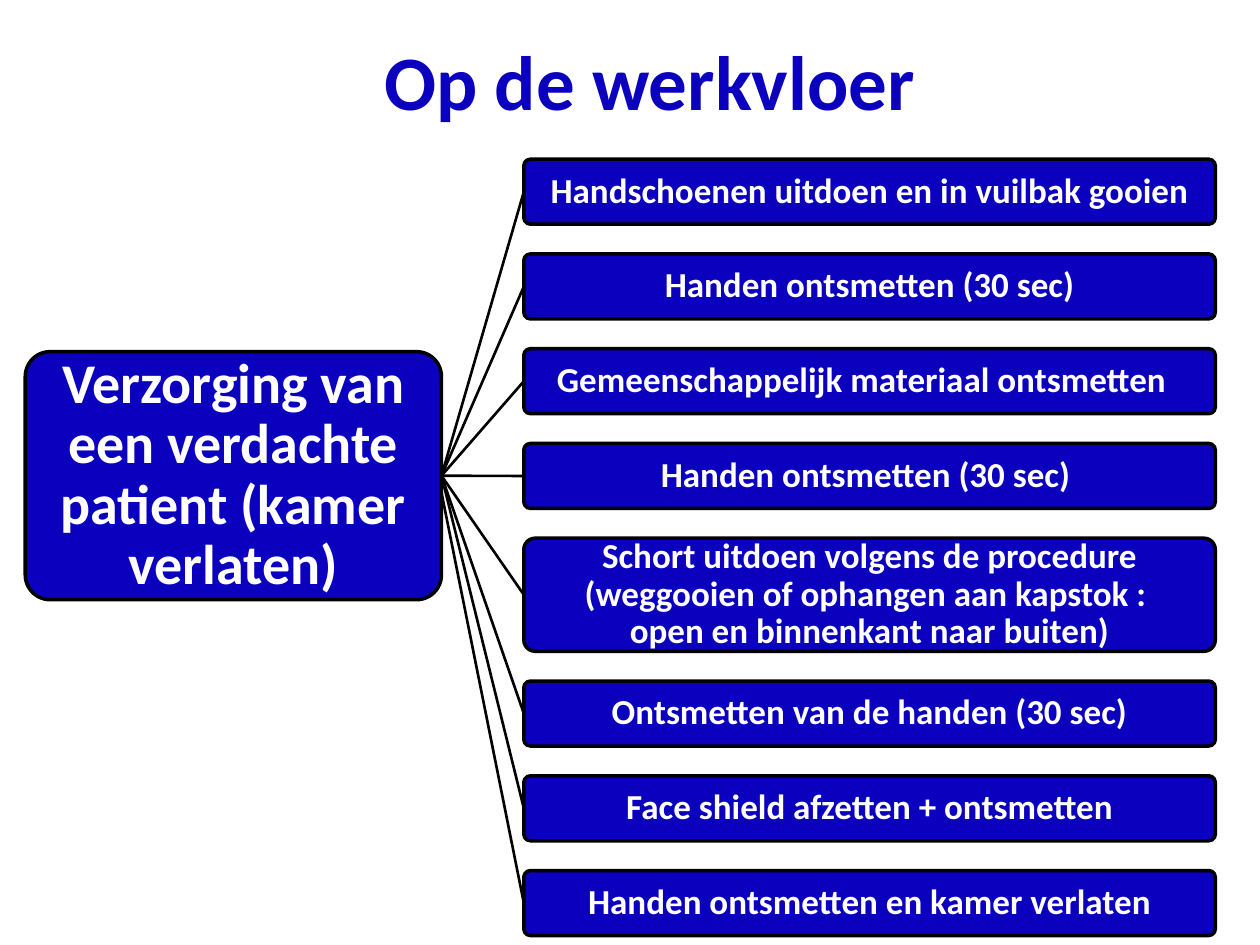
from dataclasses import dataclass

from lxml import etree
from pptx import Presentation
from pptx.dml.color import RGBColor
from pptx.enum.shapes import MSO_CONNECTOR, MSO_SHAPE
from pptx.enum.text import MSO_ANCHOR, PP_ALIGN
from pptx.oxml.ns import qn
from pptx.util import Cm, Pt

ROUNDED = MSO_SHAPE.ROUNDED_RECTANGLE
STRAIGHT = MSO_CONNECTOR.STRAIGHT
MIDDLE = MSO_ANCHOR.MIDDLE
CENTER = PP_ALIGN.CENTER


@dataclass(frozen=True)
class Theme:
    font: str = "Calibri"
    blue: RGBColor = RGBColor(0x0A, 0x00, 0xBE)
    white: RGBColor = RGBColor(0xFF, 0xFF, 0xFF)
    black: RGBColor = RGBColor(0x00, 0x00, 0x00)
    title_size: int = 44
    topic_size: int = 32
    step_size: int = 20
    border: float = 2
    branch: float = 1.5


@dataclass(frozen=True)
class Box:
    """Position and size in centimetres."""
    left: float
    top: float
    width: float
    height: float

    @property
    def right(self) -> float:
        return self.left + self.width

    @property
    def middle(self) -> float:
        return self.top + self.height / 2

    def lengths(self) -> list:
        return [Cm(value) for value in (self.left, self.top, self.width, self.height)]


@dataclass(frozen=True)
class Step:
    text: str
    height: float = 1.31
    extra_right: float = 0
    start_shift: float = 0


THEME = Theme()
TITLE_BOX = Box(4.5, 0.03, 17.2, 3.17)
TOPIC_BOX = Box(0.51, 7.09, 8.39, 5)
STEP_LEFT, STEP_TOP, STEP_WIDTH, STEP_GAP = 10.56, 3.21, 13.94, 0.6

STEPS = [
    Step("Handschoenen uitdoen en in vuilbak gooien"),
    Step("Handen ontsmetten (30 sec)"),
    Step("Gemeenschappelijk materiaal ontsmetten", extra_right=0.32),
    Step("Handen ontsmetten (30 sec)", extra_right=0.16),
    Step("Schort uitdoen volgens de procedure (weggooien of ophangen aan kapstok : "
         "\vopen en binnenkant naar buiten)", height=2.28),
    Step("Ontsmetten van de handen (30 sec)"),
    Step("Face shield afzetten + ontsmetten"),
    Step("Handen ontsmetten en kamer verlaten", start_shift=0.34),
]


def apply_format(target, values: dict) -> None:
    for name, value in values.items():
        setattr(target, name, value)


def write_text(shape, text: str, size: int, color: RGBColor,
               inset: float, extra_right: float = 0, spacing: float = 1) -> None:
    frame = shape.text_frame
    apply_format(frame, {
        "text": text, "word_wrap": True, "vertical_anchor": MIDDLE,
        "margin_left": Cm(inset), "margin_right": Cm(inset + extra_right),
        "margin_top": Cm(inset), "margin_bottom": Cm(inset),
    })
    paragraph = frame.paragraphs[0]
    apply_format(paragraph, {"alignment": CENTER, "line_spacing": spacing})
    for run in paragraph.runs:
        apply_format(run.font, {"name": THEME.font, "size": Pt(size), "bold": True})
        run.font.color.rgb = color


def draw_box(slide, box: Box, text: str, size: int,
             inset: float, extra_right: float = 0) -> None:
    shape = slide.shapes.add_shape(ROUNDED, *box.lengths())
    shape.adjustments[0] = 0.1
    shape.shadow.inherit = False
    shape.fill.solid()
    shape.fill.fore_color.rgb = THEME.blue
    shape.line.color.rgb = THEME.black
    shape.line.width = Pt(THEME.border)
    write_text(shape, text, size, THEME.white, inset, extra_right, 0.9)


def draw_branch(slide, target: Box, start_shift: float) -> None:
    connector = slide.shapes.add_connector(
        STRAIGHT, Cm(TOPIC_BOX.right), Cm(TOPIC_BOX.middle + start_shift),
        Cm(target.left), Cm(target.middle))
    connector.line.color.rgb = THEME.black
    connector.line.width = Pt(THEME.branch)
    properties = connector._element.find(qn("p:spPr"))
    etree.SubElement(properties, qn("a:effectLst"))


def main() -> None:
    presentation = Presentation()
    presentation.slide_width, presentation.slide_height = Cm(25.4), Cm(19.05)
    slide = presentation.slides.add_slide(presentation.slide_layouts[6])

    # Topic on the left
    draw_box(slide, TOPIC_BOX, "Verzorging van een verdachte patient (kamer verlaten)",
             THEME.topic_size, 0.23)

    # Steps stacked with equal gaps
    step_boxes = []
    top = STEP_TOP
    for step in STEPS:
        box = Box(STEP_LEFT, top, STEP_WIDTH, step.height)
        draw_box(slide, box, step.text, THEME.step_size, 0.08, step.extra_right)
        step_boxes.append(box)
        top += step.height + STEP_GAP

    # Title
    title = slide.shapes.add_textbox(*TITLE_BOX.lengths())
    write_text(title, "Op de werkvloer", THEME.title_size, THEME.blue, 0.13)

    # Branches from the topic to each step
    for step, box in zip(STEPS, step_boxes):
        draw_branch(slide, box, step.start_shift)

    presentation.save("out.pptx")


if __name__ == "__main__":
    main()
